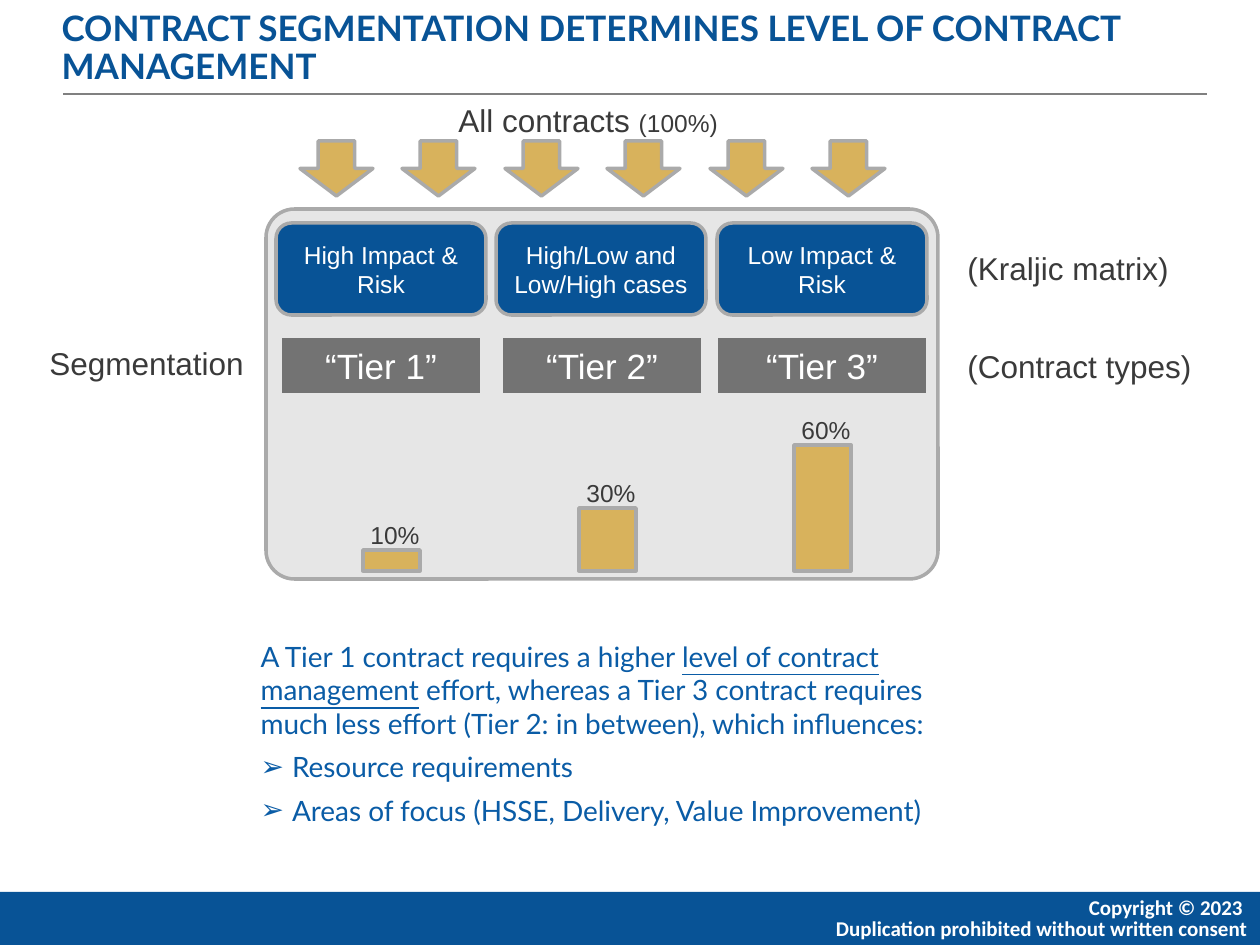
from lxml import etree
from pptx import Presentation
from pptx import util as u
from pptx.dml.color import RGBColor
from pptx.enum import shapes, text
from pptx.oxml import ns

SCALE = 914400 / 126
COLORS = {
    "blue": "085396", "text_blue": "0A5CA6", "white": "FFFFFF", "ink": "3A3A3A",
    "gold": "D8B25C", "border": "AAAAAA", "panel": "E6E6E6", "tier": "737373", "rule": "808080",
}
SHAPE = shapes.MSO_SHAPE
ALIGN = text.PP_ALIGN
ANCHOR = text.MSO_ANCHOR


def px(*lengths):
    return [u.Emu(round(length * SCALE)) for length in lengths]


def color(name):
    return RGBColor.from_string(COLORS[name])


def add_text(paragraph, words, size=18, font="Arial", fill="ink", bold=False, underline=False):
    run = paragraph.add_run()
    run.text = words
    run.font.size = u.Pt(size)
    run.font.name = font
    run.font.bold = bold
    run.font.underline = underline
    run.font.color.rgb = color(fill)


def set_bullet(paragraph, character=None, fill="text_blue"):
    properties = paragraph._p.get_or_add_pPr()
    indent = u.Inches(0.25) if character else 0
    properties.set("marL", str(indent))
    properties.set("indent", str(-indent))
    if character is None:
        etree.SubElement(properties, ns.qn("a:buNone"))
        return
    bullet_color = etree.SubElement(properties, ns.qn("a:buClr"))
    etree.SubElement(bullet_color, ns.qn("a:srgbClr"), val=COLORS[fill])
    etree.SubElement(properties, ns.qn("a:buFont"), typeface="Arial")
    etree.SubElement(properties, ns.qn("a:buChar"), char=character)


class SlideBuilder:
    def __init__(self, slide, border_width=2):
        self.slide = slide
        self.border_width = border_width

    def shape(self, kind, box, fill, border=True, words=None, size=14):
        shape = self.slide.shapes.add_shape(kind, *px(*box))
        shape.shadow.inherit = False
        shape.fill.solid()
        shape.fill.fore_color.rgb = color(fill)
        if border:
            shape.line.color.rgb = color("border")
            shape.line.width = u.Pt(self.border_width)
        else:
            shape.line.fill.background()
        if words:
            shape.text_frame.vertical_anchor = ANCHOR.MIDDLE
            paragraph = shape.text_frame.paragraphs[0]
            paragraph.alignment = ALIGN.CENTER
            add_text(paragraph, words, size, fill="white")
        return shape

    def label(self, box, *lines, align=ALIGN.LEFT, spacing=None, **style):
        frame = self.slide.shapes.add_textbox(*px(*box)).text_frame
        frame.word_wrap = True
        for index, line in enumerate(lines):
            paragraph = frame.add_paragraph() if index else frame.paragraphs[0]
            paragraph.alignment = align
            paragraph.line_spacing = spacing
            add_text(paragraph, line, **style)
        return frame.paragraphs[0]

    def line(self, start, end, fill, width):
        connector = self.slide.shapes.add_connector(
            shapes.MSO_CONNECTOR.STRAIGHT, *px(*start, *end))
        connector.line.color.rgb = color(fill)
        connector.line.width = u.Pt(width)
        etree.SubElement(connector._element.spPr, ns.qn("a:effectLst"))

    def placeholder(self, shape, box, anchor):
        shape.left, shape.top, shape.width, shape.height = px(*box)
        frame = shape.text_frame
        frame.word_wrap = True
        frame.auto_size = text.MSO_AUTO_SIZE.NONE
        frame.vertical_anchor = anchor
        return frame

    def title(self, box, words):
        frame = self.placeholder(self.slide.shapes.title, box, ANCHOR.BOTTOM)
        paragraph = frame.paragraphs[0]
        paragraph.alignment = ALIGN.LEFT
        paragraph.line_spacing = 0.9
        add_text(paragraph, words, 20, "Lato", "blue", bold=True)

    def body(self, box, intro, items):
        style = {"size": 16, "font": "Lato", "fill": "text_blue"}
        frame = self.placeholder(self.slide.placeholders[1], box, ANCHOR.TOP)
        paragraph = frame.paragraphs[0]
        set_bullet(paragraph)
        paragraph.space_before = u.Pt(0)
        for words, underline in intro:
            add_text(paragraph, words, underline=underline, **style)
        for item in items:
            paragraph = frame.add_paragraph()
            set_bullet(paragraph, "➢")
            paragraph.space_before = u.Pt(5.6)
            add_text(paragraph, item, **style)


def main():
    presentation = Presentation()
    presentation.slide_width, presentation.slide_height = px(1260, 945)
    builder = SlideBuilder(presentation.slides.add_slide(presentation.slide_layouts[1]))

    builder.shape(SHAPE.RECTANGLE, (0, 892, 1260, 53), "blue", border=False)
    builder.line((63, 94), (1207, 94), "rule", 1)
    builder.label((693, 892, 567, 57), "Copyright © 2023 ",
                  "Duplication prohibited without written consent",
                  align=ALIGN.RIGHT, spacing=0.85, size=12, font="Calibri",
                  fill="white", bold=True)
    builder.title((49, 9, 1189, 84),
                  "CONTRACT SEGMENTATION DETERMINES LEVEL OF CONTRACT MANAGEMENT")
    builder.body(
        (248, 633, 725, 207),
        [("A Tier 1 contract requires a higher ", False),
         ("level of contract management", True),
         (" effort, whereas a Tier 3 contract requires much less effort "
          "(Tier 2: in between), which influences:", False)],
        ["Resource requirements", "Areas of focus (HSSE, Delivery, Value Improvement)"])

    heading = builder.label((446, 95, 323, 50), "All contracts ")
    add_text(heading, "(100%)", 14)
    for index in range(6):
        builder.shape(SHAPE.DOWN_ARROW, (300 + round(102.4 * index), 141, 73, 55), "gold")

    panel = builder.shape(SHAPE.ROUNDED_RECTANGLE, (266, 209, 672, 370), "panel")
    panel.adjustments[0] = 0.077

    tiers = [
        ("High Impact & Risk", 282, 198, 10),
        ("High/Low and Low/High cases", 503, 198, 30),
        ("Low Impact & Risk", 718, 208, 60),
    ]
    for index, (criterion, tier_left, tier_width, percent) in enumerate(tiers):
        builder.shape(SHAPE.ROUNDED_RECTANGLE,
                      (276 + round(220.5 * index), 223, 210, 92), "blue", words=criterion)
        builder.shape(SHAPE.RECTANGLE, (tier_left, 338, tier_width, 55), "tier",
                      border=False, words=f"“Tier {index + 1}”", size=20)
        bar_left = 363 + round(215.5 * index)
        bar_height = round(2.1 * percent)
        bar_top = 571 - bar_height
        builder.shape(SHAPE.RECTANGLE, (bar_left, bar_top, 57, bar_height), "gold")
        builder.label((bar_left - 14, bar_top - 36, 92, 43), f"{percent}%",
                      align=ALIGN.CENTER, size=14)

    builder.label((37, 338, 234, 50), "Segmentation")
    builder.label((955, 341, 273, 50), "(Contract types)")
    builder.label((955, 243, 273, 50), "(Kraljic matrix)")

    presentation.save("out.pptx")


if __name__ == "__main__":
    main()
